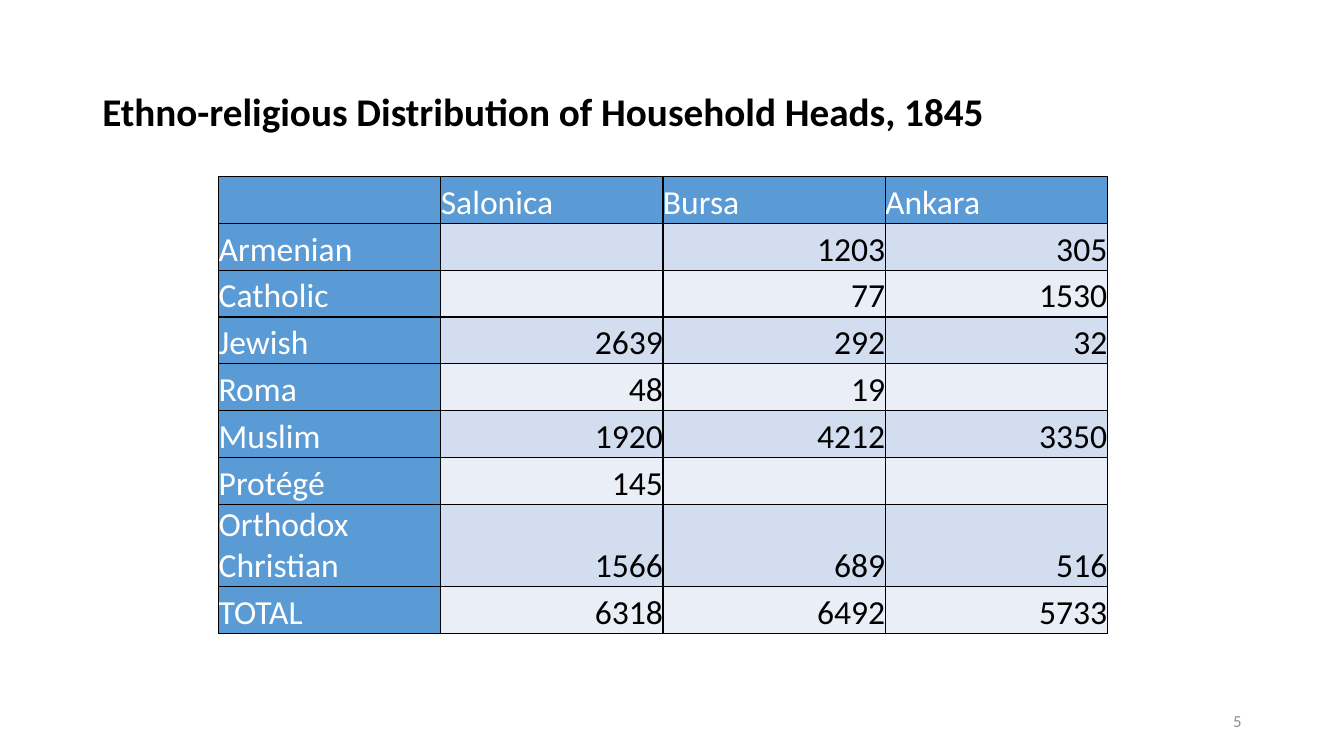
"""Build the slide on household heads by ethno-religious group."""
from dataclasses import dataclass

from lxml.etree import SubElement
from pptx import Presentation
from pptx.dml.color import RGBColor
from pptx.enum.text import MSO_ANCHOR, PP_ALIGN
from pptx.oxml.ns import qn
from pptx.slide import Slide
from pptx.table import _Cell
from pptx.text.text import _Paragraph
from pptx.util import Pt


@dataclass(frozen=True)
class Theme:
    """Colours and type sizes of the slide."""
    font: str = "Calibri"
    ink: str = "000000"
    header_ink: str = "FFFFFF"
    number_ink: str = "8C8C8C"
    header_fill: str = "5B9BD5"
    band_fills: tuple[str, str] = ("D2DEEF", "EAEFF7")
    title_size: float = 28
    table_size: float = 24
    number_size: float = 12
    border_width: float = 1


@dataclass(frozen=True)
class Caption:
    """A single line of text with its frame in points."""
    text: str
    left: float
    top: float
    width: float
    height: float
    size: float
    colour: str
    bold: bool = False
    align: PP_ALIGN = PP_ALIGN.LEFT
    line_spacing: float = 1.0


@dataclass(frozen=True)
class Group:
    """Household heads of one group in each city."""
    name: str
    salonica: str
    bursa: str
    ankara: str
    height: float = 33.5

    def texts(self) -> tuple[str, str, str, str]:
        """Return the cell texts from left to right."""
        return self.name, self.salonica, self.bursa, self.ankara


THEME = Theme()
CAPTIONS = (
    Caption("Ethno-religious Distribution of Household Heads, 1845", 66, 28.8, 828, 104.4,
            THEME.title_size, THEME.ink, bold=True, line_spacing=0.9),
    Caption("5", 678, 500.5, 216, 28.75, THEME.number_size, THEME.number_ink,
            align=PP_ALIGN.RIGHT),
)
GROUPS = (
    Group("", "Salonica", "Bursa", "Ankara"),
    Group("Armenian", "", "1203", "305"),
    Group("Catholic", "", "77", "1530"),
    Group("Jewish", "2639", "292", "32"),
    Group("Roma", "48", "19", ""),
    Group("Muslim", "1920", "4212", "3350"),
    Group("Protégé", "145", "", ""),
    Group("Orthodox Christian", "1566", "689", "516", height=58.6),
    Group("TOTAL", "6318", "6492", "5733"),
)
TABLE_LEFT, TABLE_TOP, COLUMN_WIDTH, COLUMN_COUNT = 156.2, 126, 158.7, 4


def style_paragraph(paragraph: _Paragraph, size: float, colour: str,
                    align: PP_ALIGN, bold: bool = False) -> None:
    """Apply alignment and font to a paragraph."""
    paragraph.alignment = align
    for font in (paragraph.font, *(run.font for run in paragraph.runs)):
        font.name = THEME.font
        font.size = Pt(size)
        font.bold = bold
        font.color.rgb = RGBColor.from_string(colour)


def draw_caption(slide: Slide, caption: Caption) -> None:
    """Draw a caption, centred vertically in its frame."""
    frame = slide.shapes.add_textbox(Pt(caption.left), Pt(caption.top), Pt(caption.width),
                                     Pt(caption.height)).text_frame
    frame.word_wrap = True
    frame.vertical_anchor = MSO_ANCHOR.MIDDLE
    frame.text = caption.text
    paragraph = frame.paragraphs[0]
    paragraph.line_spacing = caption.line_spacing
    style_paragraph(paragraph, caption.size, caption.colour, caption.align, caption.bold)


def add_borders(cell: _Cell) -> None:
    """Outline a cell on all four sides."""
    properties = cell._tc.get_or_add_tcPr()
    for side in ("a:lnL", "a:lnR", "a:lnT", "a:lnB"):
        border = SubElement(properties, qn(side), w=str(Pt(THEME.border_width)))
        fill = SubElement(border, qn("a:solidFill"))
        SubElement(fill, qn("a:srgbClr"), val=THEME.ink)


def fill_cell(cell: _Cell, text: str, row: int, column: int) -> None:
    """Write and style one cell according to its place in the table."""
    is_header = row == 0 or column == 0
    fill = THEME.header_fill if is_header else THEME.band_fills[(row - 1) % 2]
    add_borders(cell)
    cell.fill.solid()
    cell.fill.fore_color.rgb = RGBColor.from_string(fill)
    cell.margin_left = cell.margin_right = cell.margin_top = cell.margin_bottom = Pt(0)
    cell.vertical_anchor = MSO_ANCHOR.BOTTOM
    cell.text_frame.text = text
    style_paragraph(cell.text_frame.paragraphs[0], THEME.table_size,
                    THEME.header_ink if is_header else THEME.ink,
                    PP_ALIGN.LEFT if is_header else PP_ALIGN.RIGHT)


def draw_table(slide: Slide, groups: tuple[Group, ...]) -> None:
    """Draw the table of household heads."""
    table = slide.shapes.add_table(
        len(groups), COLUMN_COUNT, Pt(TABLE_LEFT), Pt(TABLE_TOP),
        Pt(COLUMN_WIDTH * COLUMN_COUNT), Pt(sum(group.height for group in groups))).table
    table.first_row = table.horz_banding = False
    for column in table.columns:
        column.width = Pt(COLUMN_WIDTH)
    for row, group in enumerate(groups):
        table.rows[row].height = Pt(group.height)
        for column, text in enumerate(group.texts()):
            fill_cell(table.cell(row, column), text, row, column)


def main() -> None:
    """Create and save the presentation."""
    presentation = Presentation()
    presentation.slide_width, presentation.slide_height = Pt(960), Pt(540)
    slide = presentation.slides.add_slide(presentation.slide_layouts[6])
    draw_table(slide, GROUPS)
    for caption in CAPTIONS:
        draw_caption(slide, caption)
    presentation.save("out.pptx")


if __name__ == "__main__":
    main()
